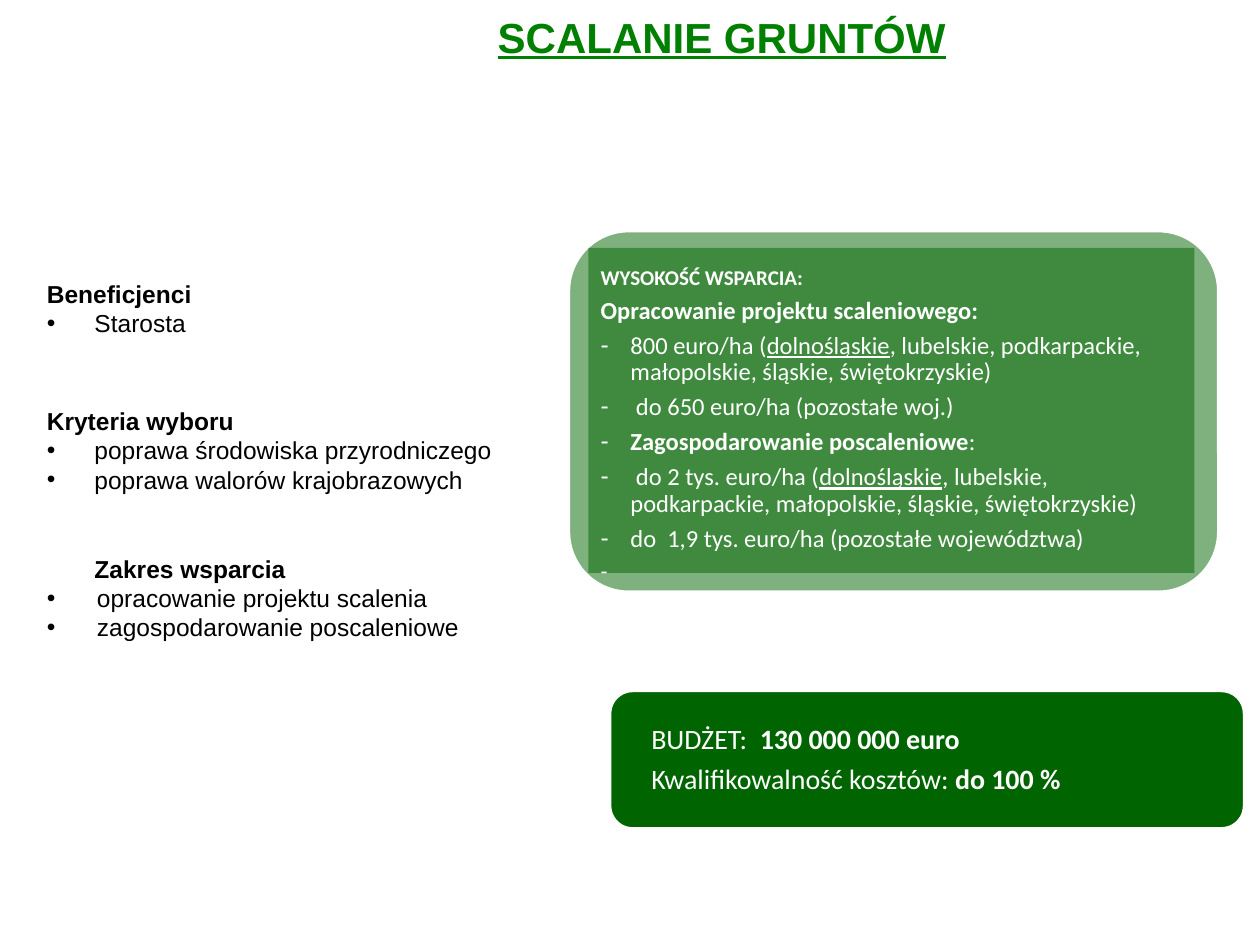
"""Build the land consolidation slide: beneficiaries, support rates and budget."""
from dataclasses import dataclass

from lxml import etree
from pptx import Presentation
from pptx.dml.color import RGBColor
from pptx.enum.shapes import MSO_SHAPE
from pptx.enum.text import MSO_ANCHOR, MSO_AUTO_SIZE, PP_ALIGN
from pptx.oxml.ns import qn
from pptx.util import Cm, Pt

RECT, ROUND = MSO_SHAPE.RECTANGLE, MSO_SHAPE.ROUNDED_RECTANGLE
LEFT, CENTER, JUSTIFY = PP_ALIGN.LEFT, PP_ALIGN.CENTER, PP_ALIGN.JUSTIFY
TOP, MIDDLE = MSO_ANCHOR.TOP, MSO_ANCHOR.MIDDLE
NO_FIT = MSO_AUTO_SIZE.NONE


@dataclass
class Theme:
    head_font: str = "Arial"
    panel_font: str = "Calibri"
    title_color: RGBColor = RGBColor(0x00, 0x80, 0x00)
    green: RGBColor = RGBColor(0x00, 0x64, 0x00)
    white: RGBColor = RGBColor(0xFF, 0xFF, 0xFF)
    black: RGBColor = RGBColor(0x00, 0x00, 0x00)
    title_size: int = 24
    budget_size: int = 16
    body_size: int = 14
    small_size: int = 12


theme = Theme()


def write(tf, text, *, size, font, color, bold=False, underline=False, mark="bold",
          align=LEFT, bullet=None, margin=0, hang=0, before=0, after=0, spacing=1.0):
    """Add a paragraph; parts between asterisks get the format named by mark."""
    p = tf.paragraphs[0]
    if p.runs:
        p = tf.add_paragraph()
    pPr = p._p.get_or_add_pPr()
    pPr.set("marL", str(Cm(margin)))
    pPr.set("indent", str(-Cm(hang)))
    if bullet:
        etree.SubElement(pPr, qn("a:buFont")).set("typeface", theme.head_font)
        etree.SubElement(pPr, qn("a:buChar")).set("char", bullet)
    else:
        etree.SubElement(pPr, qn("a:buNone"))
    p.alignment = align
    p.line_spacing = spacing
    p.space_before, p.space_after = Pt(before), Pt(after)
    for i, part in enumerate(text.split("*")):
        if not part:
            continue
        r = p.add_run()
        r.text = part
        r.font.name, r.font.size = font, Pt(size)
        r.font.color.rgb = color
        r.font.bold, r.font.underline = bold, underline
        if i % 2:
            setattr(r.font, mark, True)


def add_box(kind, left, top, width, height, alpha=None):
    """Add a green shape; only the rounded frames have a white outline."""
    sp = s.shapes.add_shape(kind, Cm(left), Cm(top), Cm(width), Cm(height))
    sp.shadow.inherit = False
    sp.fill.solid()
    sp.fill.fore_color.rgb = theme.green
    if alpha:
        clr = sp._element.spPr.find(qn("a:solidFill")).find(qn("a:srgbClr"))
        etree.SubElement(clr, qn("a:alpha")).set("val", str(alpha * 1000))
    if kind == ROUND:
        sp.line.color.rgb = theme.white
        sp.line.width = Pt(2)
    else:
        sp.line.fill.background()
    tf = sp.text_frame
    tf.word_wrap = True
    tf.margin_left = tf.margin_right = tf.margin_top = tf.margin_bottom = Cm(0.25)
    tf.vertical_anchor = MIDDLE
    return tf


prs = Presentation()
prs.slide_width, prs.slide_height = Cm(25.4), Cm(19.05)
s = prs.slides.add_slide(prs.slide_layouts[1])

title, body = s.placeholders
title.left, title.top, title.width, title.height = Cm(7.21), Cm(0.08), Cm(14.68), Cm(1.3)
write(title.text_frame, "SCALANIE GRUNTÓW", size=theme.title_size, font=theme.head_font,
      color=theme.title_color, bold=True, underline=True, align=CENTER)

body.left, body.top, body.width, body.height = Cm(0.69), Cm(4.27), Cm(24), Cm(12.57)
tf = body.text_frame
tf.auto_size = NO_FIT
tf.vertical_anchor = TOP
tf.margin_top = Cm(1.35)
sections = [
    ("Beneficjenci", ["Starosta"], 0, 0.96, 0.96, JUSTIFY),
    ("Kryteria wyboru", ["poprawa środowiska przyrodniczego",
                         "poprawa walorów krajobrazowych"], 39, 0.96, 0.96, JUSTIFY),
    ("Zakres wsparcia", ["opracowanie projektu scalenia",
                         "zagospodarowanie poscaleniowe"], 34, 1.01, 0, LEFT),
]
base = dict(size=theme.body_size, font=theme.head_font, color=theme.black)
for heading, items, gap, indent, head_hang, align in sections:
    write(tf, heading, bold=True, before=gap, margin=0.96, hang=head_hang, align=align, **base)
    for item in items:
        write(tf, item, bullet="•", margin=indent, hang=indent, align=align, **base)

add_box(ROUND, 11.46, 4.65, 13.11, 7.29, alpha=50)
tf = add_box(RECT, 11.86, 5, 12.22, 6.55, alpha=50)
tf.vertical_anchor = TOP
tf.margin_top = Cm(0.4)
small, normal, large = (
    dict(size=size, after=size * 0.35, spacing=0.9, font=theme.panel_font, color=theme.white)
    for size in (theme.small_size, theme.body_size, theme.budget_size))
dash = dict(bullet="-", margin=0.6, hang=0.6)
write(tf, "WYSOKOŚĆ WSPARCIA:", bold=True, **small)
write(tf, "Opracowanie projektu scaleniowego:", bold=True, **normal)
rates = [
    ("800 euro/ha (*dolnośląskie*, lubelskie, podkarpackie, małopolskie, śląskie, "
     "świętokrzyskie)", "underline"),
    (" do 650 euro/ha (pozostałe woj.)", "bold"),
    ("*Zagospodarowanie poscaleniowe*:", "bold"),
    (" do 2 tys. euro/ha (*dolnośląskie*, lubelskie, podkarpackie, małopolskie, śląskie, "
     "świętokrzyskie)", "underline"),
    ("do  1,9 tys. euro/ha (pozostałe województwa)", "bold"),
]
for text, mark in rates:
    write(tf, text, mark=mark, **dash, **normal)
write(tf, " ", **dash, **small)

add_box(ROUND, 12.29, 13.92, 12.8, 2.79)
tf = add_box(RECT, 12.88, 14.07, 11.73, 2.54)
for text in ("BUDŻET:  *130 000 000 euro*", "Kwalifikowalność kosztów: *do 100 %*"):
    write(tf, text, **large)

prs.save("out.pptx")
